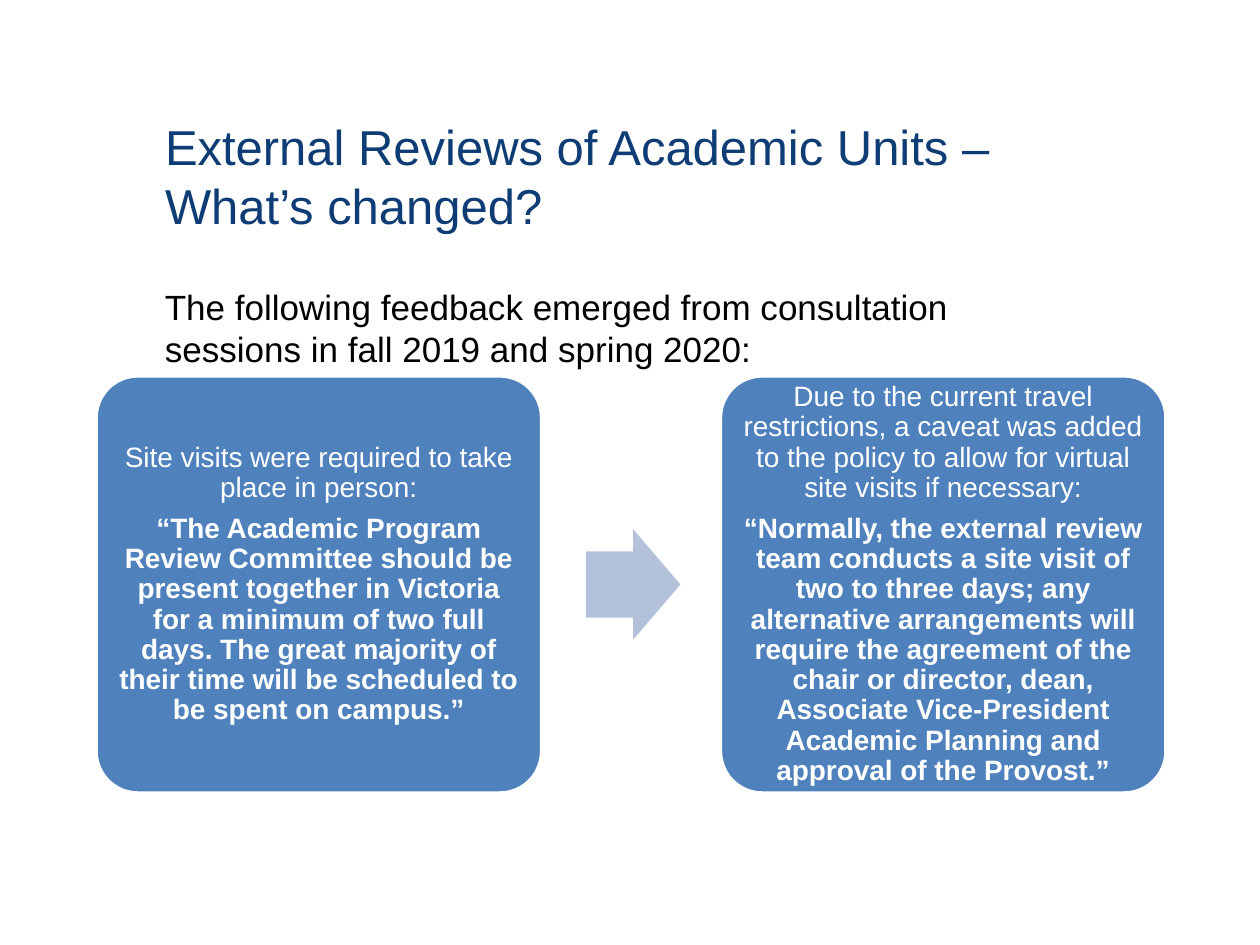
"""Build the slide on changes to site visits in external reviews."""
from pptx import Presentation
from pptx.dml.color import RGBColor
from pptx.enum.shapes import MSO_SHAPE
from pptx.enum.text import MSO_ANCHOR, PP_ALIGN
from pptx.util import Pt

ROUND, ARROW = MSO_SHAPE.ROUNDED_RECTANGLE, MSO_SHAPE.RIGHT_ARROW
MIDDLE = MSO_ANCHOR.MIDDLE
LEFT, CENTER = PP_ALIGN.LEFT, PP_ALIGN.CENTER
NAVY = RGBColor(0x0E, 0x3C, 0x75)
BLUE = RGBColor(0x4F, 0x81, 0xBD)
PALE = RGBColor(0xB3, 0xC1, 0xDB)
WHITE = RGBColor(0xFF, 0xFF, 0xFF)
BLACK = RGBColor(0, 0, 0)

TITLE = "External Reviews of Academic Units – What’s changed?"
INTRO = ("The following feedback emerged from consultation sessions "
         "in fall 2019 and spring 2020:")
CARDS = [
    ("Site visits were required to take place in person:",
     "“The Academic Program Review Committee should be present together in "
     "Victoria for a minimum of two full days. The great majority of their "
     "time will be scheduled to be spent on campus.”"),
    ("Due to the current travel restrictions, a caveat was added to the "
     "policy to allow for virtual site visits if necessary:",
     "“Normally, the external review team conducts a site visit of two to "
     "three days; any alternative arrangements will require the agreement of "
     "the chair or director, dean, Associate Vice-President Academic Planning "
     "and approval of the Provost.”"),
]
EDGE, TEXT_W = 87.1, 493.2
CARD_X, CARD_Y, CARD_W, CARD_H, STEP = 54.9, 214.8, 254.6, 238.4, 356.8
ARROW_X, ARROW_W, ARROW_H = 334.8, 54, 63.2
INSET, GAP = 5, 6.3


def place(shape, x, y, w, h):
    shape.left, shape.top, shape.width, shape.height = map(Pt, (x, y, w, h))


def write(para, text, size, color, align=LEFT, bold=False):
    para.alignment = align
    run = para.add_run()
    run.text = text
    font = run.font
    font.name, font.size, font.bold = "Arial", Pt(size), bold
    font.color.rgb = color


def draw(slide, kind, x, y, w, h, fill, adjust):
    shape = slide.shapes.add_shape(kind, Pt(x), Pt(y), Pt(w), Pt(h))
    shape.shadow.inherit = False
    shape.fill.solid()
    shape.fill.fore_color.rgb = fill
    shape.line.fill.background()
    for i, value in enumerate(adjust):
        shape.adjustments[i] = value
    return shape


def add_card(slide, x, texts):
    card = draw(slide, ROUND, x, CARD_Y, CARD_W, CARD_H, BLUE, [0.1])
    card.line.color.rgb = WHITE
    card.line.width = Pt(2)
    frame = card.text_frame
    frame.word_wrap = True
    frame.vertical_anchor = MIDDLE
    frame.margin_left = frame.margin_right = Pt(INSET)
    frame.margin_top = frame.margin_bottom = Pt(INSET)
    for i, text in enumerate(texts):
        para = frame.add_paragraph() if i else frame.paragraphs[0]
        para.line_spacing = 0.9
        para.space_before = Pt(GAP if i else 0)
        write(para, text, 16, WHITE, CENTER, i > 0)


def main():
    deck = Presentation()
    deck.slide_width, deck.slide_height = Pt(720), Pt(540)
    slide = deck.slides.add_slide(deck.slide_layouts[5])

    title = slide.shapes.title
    place(title, EDGE, 55.4, TEXT_W, 90)
    title.text_frame.word_wrap = True
    title.text_frame.vertical_anchor = MIDDLE
    write(title.text_frame.paragraphs[0], TITLE, 28, NAVY)

    intro = slide.shapes.add_textbox(0, 0, 0, 0)
    place(intro, EDGE, 159.8, TEXT_W, 55)
    intro.text_frame.word_wrap = True
    write(intro.text_frame.paragraphs[0], INTRO, 20, BLACK)

    for i, texts in enumerate(CARDS):
        add_card(slide, CARD_X + i * STEP, texts)
    draw(slide, ARROW, ARROW_X, CARD_Y + (CARD_H - ARROW_H) / 2,
         ARROW_W, ARROW_H, PALE, [0.6, 0.5])
    deck.save("out.pptx")


if __name__ == "__main__":
    main()
